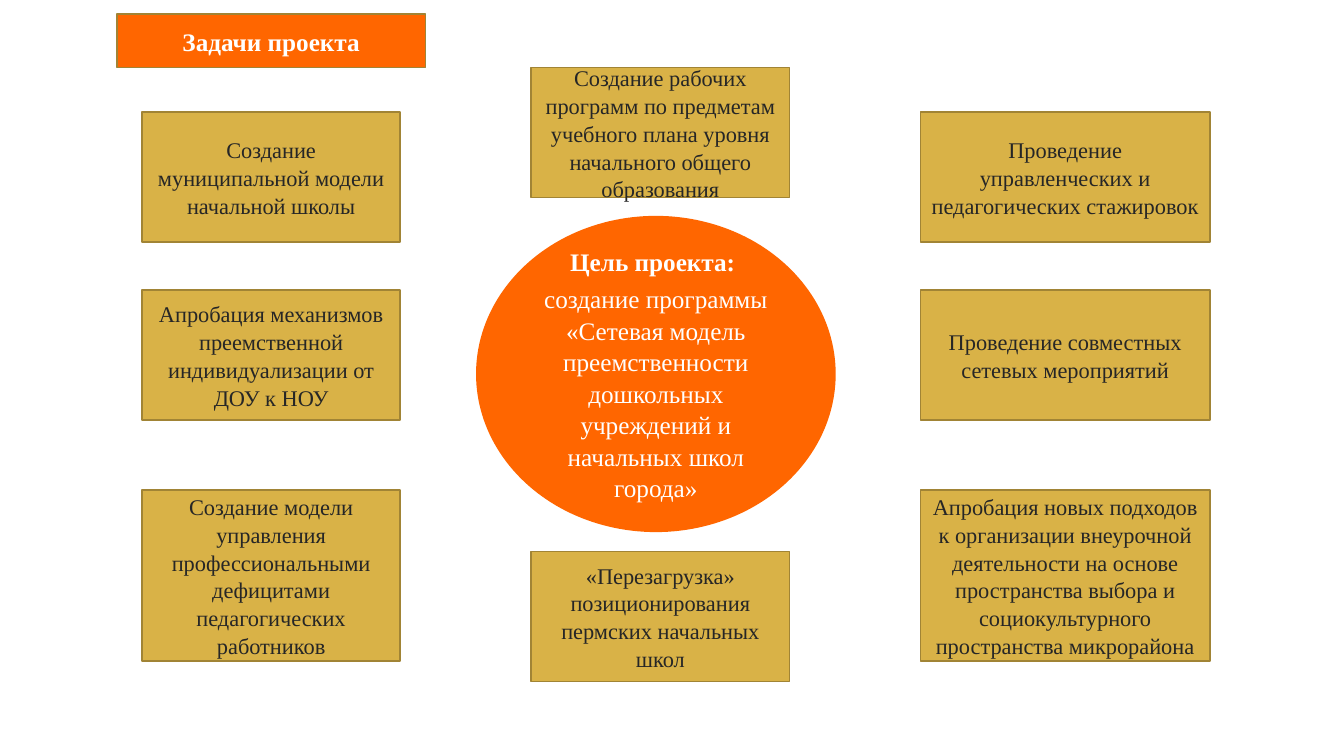
from dataclasses import dataclass

from pptx import Presentation
from pptx.dml.color import RGBColor
from pptx.enum.shapes import MSO_SHAPE
from pptx.enum.text import MSO_ANCHOR, MSO_AUTO_SIZE, PP_ALIGN
from pptx.shapes.autoshape import Shape
from pptx.util import Inches, Pt

COLORS = {
    "orange": "FF6600",
    "gold": "D9B247",
    "bronze": "A18435",
    "dark": "262626",
    "white": "FFFFFF",
}
FRAME_FORMAT = {
    "word_wrap": True,
    "auto_size": MSO_AUTO_SIZE.NONE,
    "vertical_anchor": MSO_ANCHOR.MIDDLE,
}
GOAL_SPACING = {"space_before": Pt(4), "space_after": Pt(6)}


@dataclass(frozen=True)
class Task:
    left: float
    top: float
    width: float
    height: float
    text: str


LEFT, CENTER, RIGHT = 1.41, 5.27, 9.13
UPPER, MIDDLE, LOWER = 1.11, 2.88, 4.86
NARROW, WIDE = 2.56, 2.87
SHORT, TALL = 1.29, 1.7

TASKS = [
    Task(LEFT, UPPER, NARROW, SHORT, "Создание муниципальной модели начальной школы"),
    Task(LEFT, MIDDLE, NARROW, SHORT,
         "Апробация механизмов преемственной индивидуализации от ДОУ к НОУ"),
    Task(LEFT, LOWER, NARROW, TALL,
         "Создание модели управления профессиональными дефицитами педагогических работников"),
    Task(CENTER, 0.67, NARROW, SHORT,
         "Создание рабочих программ по предметам учебного плана уровня "
         "начального общего образования"),
    Task(CENTER, 5.47, NARROW, SHORT,
         "«Перезагрузка» позиционирования пермских начальных школ"),
    Task(RIGHT, UPPER, WIDE, SHORT,
         "Проведение управленческих и педагогических стажировок "),
    Task(RIGHT, MIDDLE, WIDE, SHORT, "Проведение совместных сетевых мероприятий"),
    Task(RIGHT, LOWER, WIDE, TALL,
         "Апробация новых подходов к организации внеурочной деятельности на основе "
         "пространства выбора и социокультурного пространства микрорайона"),
]
GOAL = [
    "Цель проекта: ",
    "создание программы «Сетевая модель преемственности дошкольных учреждений "
    "и начальных школ города»",
]


def apply_format(target: object, values: dict[str, object]) -> None:
    for attribute, value in values.items():
        setattr(target, attribute, value)


def rgb(name: str) -> RGBColor:
    return RGBColor.from_string(COLORS[name])


def paint(shape: Shape, fill: str, line: str) -> None:
    shape.fill.solid()
    shape.fill.fore_color.rgb = rgb(fill)
    shape.line.color.rgb = rgb(line)
    shape.line.width = Pt(1.25)


def write(shape: Shape, texts: list[str], size: int, color: str, bold_first: bool) -> None:
    frame = shape.text_frame
    frame.text = "\n".join(texts)
    apply_format(frame, FRAME_FORMAT)
    for index, paragraph in enumerate(frame.paragraphs):
        apply_format(paragraph, {"alignment": PP_ALIGN.CENTER, "line_spacing": 1.04})
        if index:
            apply_format(paragraph, GOAL_SPACING)
        apply_format(paragraph.font, {
            "name": "Times New Roman",
            "size": Pt(size),
            "bold": bold_first and index == 0,
        })
        paragraph.font.color.rgb = rgb(color)


def main() -> None:
    presentation = Presentation()
    apply_format(presentation, {"slide_width": Inches(13.33), "slide_height": Inches(7.5)})
    slide = presentation.slides.add_slide(presentation.slide_layouts[5])

    heading = slide.shapes.title
    apply_format(heading, {
        "left": Inches(1.16),
        "top": Inches(0.14),
        "width": Inches(3.06),
        "height": Inches(0.53),
    })
    paint(heading, "orange", "bronze")
    write(heading, ["Задачи проекта"], 18, "white", True)

    goal = slide.shapes.add_shape(
        MSO_SHAPE.OVAL, Inches(4.73), Inches(2.15), Inches(3.55), Inches(3.12))
    goal.shadow.inherit = False
    paint(goal, "orange", "orange")
    write(goal, GOAL, 18, "white", True)

    for task in TASKS:
        card = slide.shapes.add_shape(
            MSO_SHAPE.RECTANGLE, Inches(task.left), Inches(task.top),
            Inches(task.width), Inches(task.height))
        card.shadow.inherit = False
        paint(card, "gold", "bronze")
        write(card, [task.text], 16, "dark", False)

    presentation.save("out.pptx")


if __name__ == "__main__":
    main()
